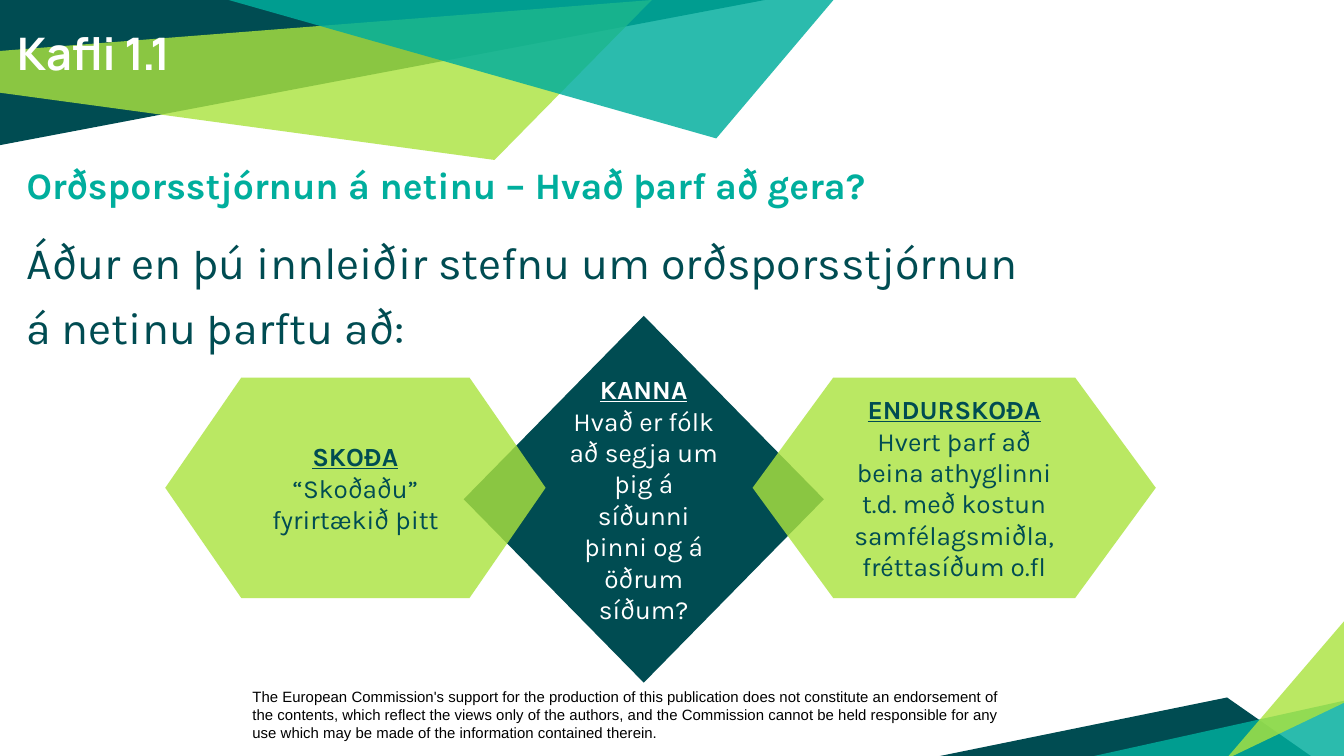
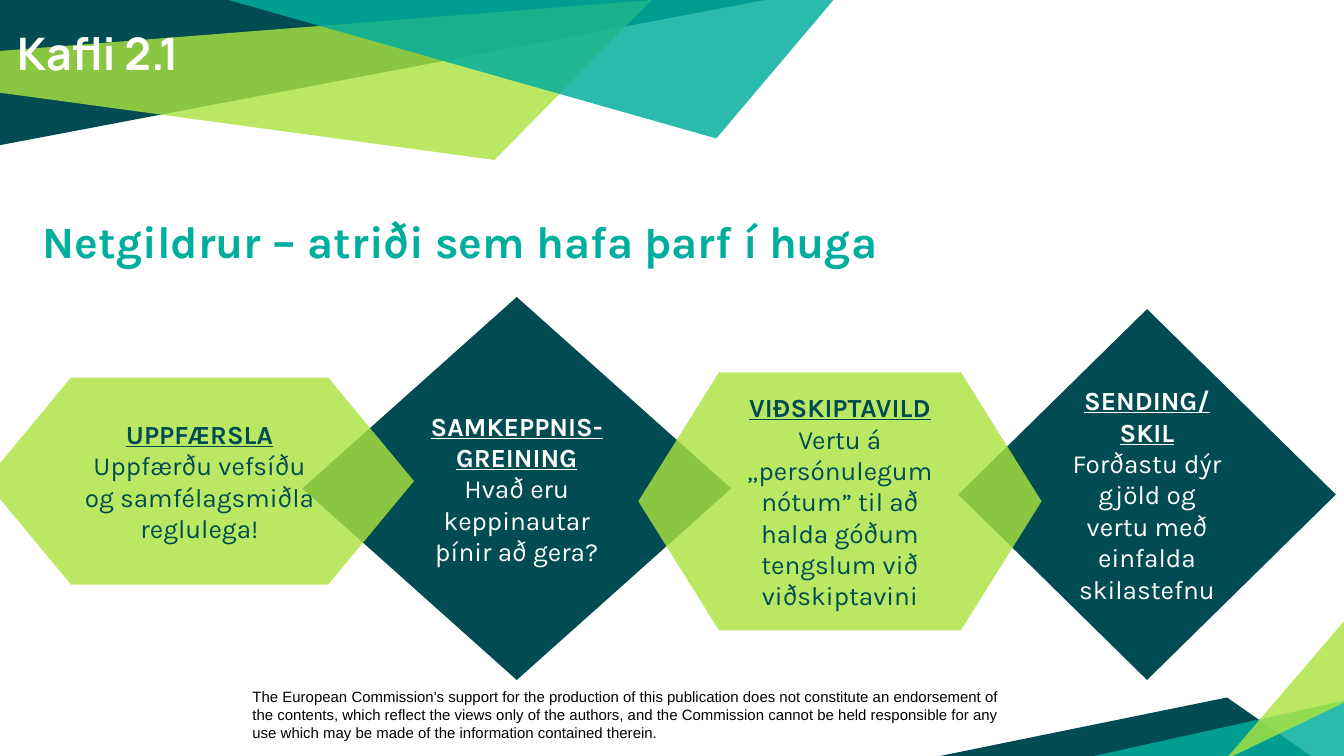
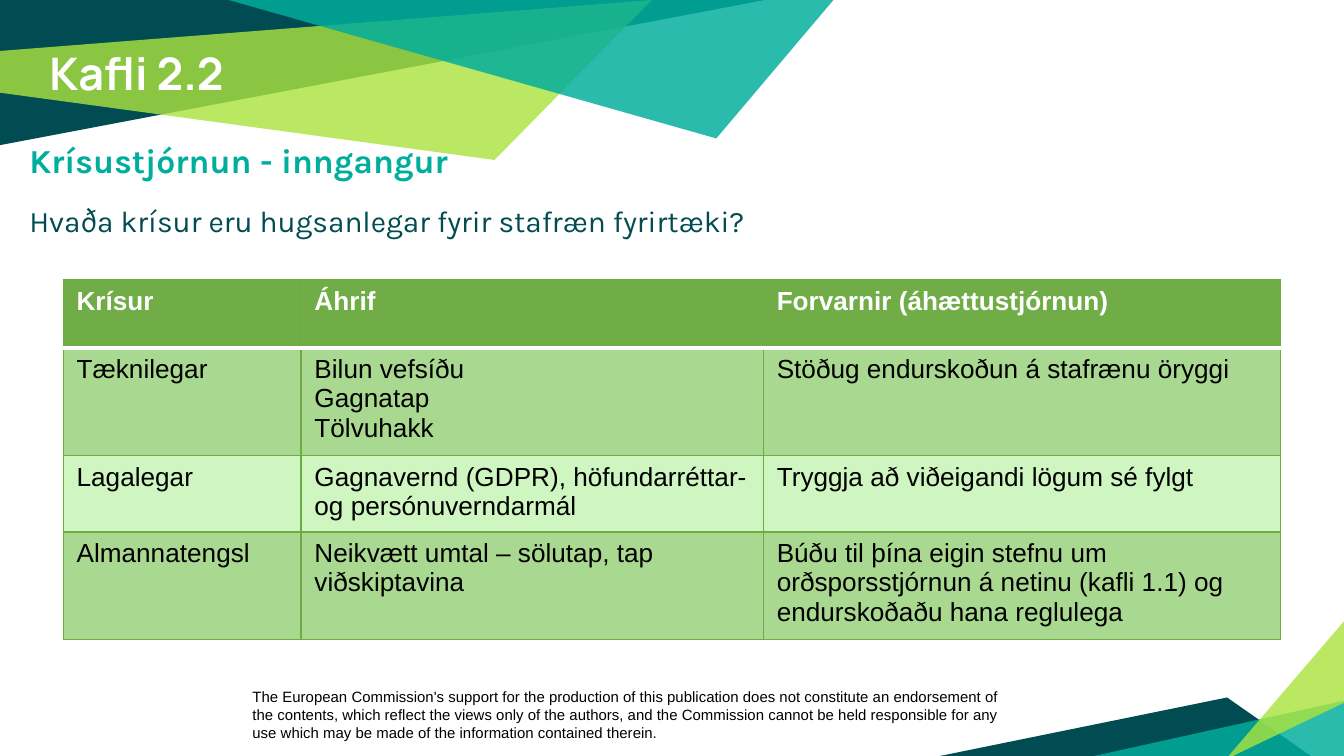
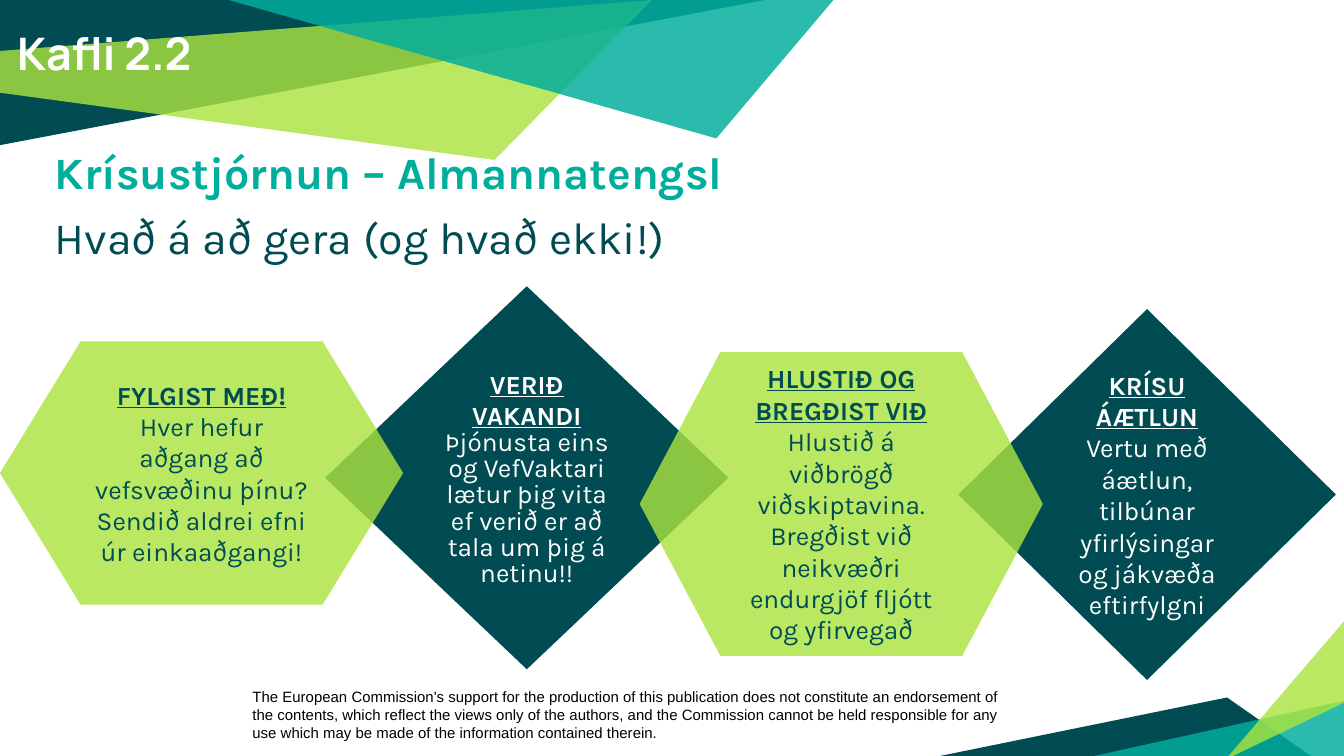
import pptx
import pptx.util
import pptx.dml.color
import pptx.enum.shapes
import pptx.enum.text
import pptx.oxml.ns
from dataclasses import dataclass
from lxml import etree

Inches, Pt = pptx.util.Inches, pptx.util.Pt
RGB = pptx.dml.color.RGBColor.from_string
qn = pptx.oxml.ns.qn
MSO = pptx.enum.shapes.MSO_SHAPE
ALIGN = pptx.enum.text.PP_ALIGN
ANCHOR = pptx.enum.text.MSO_ANCHOR


@dataclass(frozen=True)
class Theme:
    # Colours
    dark: str = "004C52"
    teal: str = "00AE9D"
    lime: str = "ABE33F"
    white: str = "FFFFFF"
    black: str = "000000"
    header: str = "70AD47"
    border: str = "6DAC43"
    band_dark: str = "A9D890"
    band_light: str = "CFF5C1"
    lime_alpha: int = 81
    teal_alpha: int = 83
    # Fonts and sizes
    heading_font: str = "Manrope"
    body_font: str = "Karla"
    plain_font: str = "Arial"
    large: int = 24
    medium: int = 20
    small_heading: int = 18
    question: int = 16
    label: int = 14
    footer: int = 8


T = Theme()

FOOTER = ("The European Commission's support for the production of this publication "
          "does not constitute an endorsement of the contents, which reflect the views "
          "only of the authors, and the Commission cannot be held responsible for any "
          "use which may be made of the information contained therein.")

# Decorative bands: colour, opacity in percent, corner points
BANDS = [
    (T.dark, 100, [(0, 0), (0, 1.08), (5.69, 0)]),
    (T.lime, T.lime_alpha, [(-0.01, 0.38), (0, 0.69), (3.68, 1.19), (4.85, 0)]),
    (T.dark, 100, [(6.97, 5.63), (9.76, 5.63), (9.13, 5.19)]),
    (T.teal, T.teal_alpha, [(10.02, 5.21), (10.02, 5.65), (8.03, 5.65)]),
    (T.lime, T.lime_alpha, [(10.02, 5.22), (10.02, 4.6), (9.12, 5.65)]),
    (T.teal, T.teal_alpha, [(1.7, 0), (5.33, 1.03), (6.21, -0.01), (6.09, 0)]),
]

CRISES = [
    ["Krísur", "Áhrif", "Forvarnir (áhættustjórnun)"],
    ["Tæknilegar", "Bilun vefsíðu\nGagnatap\nTölvuhakk",
     "Stöðug endurskoðun á stafrænu öryggi"],
    ["Lagalegar", "Gagnavernd (GDPR), höfundarréttar- og persónuverndarmál",
     "Tryggja að viðeigandi lögum sé fylgt"],
    ["Almannatengsl", "Neikvætt umtal – sölutap, tap viðskiptavina",
     "Búðu til þína eigin stefnu um orðsporsstjórnun á netinu (kafli 1.1) "
     "og endurskoðaðu hana reglulega"],
]


# Text
def write(tf, text, first=False, para=None, **font):
    """Write one paragraph; para and font hold the format values."""
    p = tf.paragraphs[0] if first else tf.add_paragraph()
    for name, value in (para or {}).items():
        setattr(p, name, value)
    r = p.add_run()
    r.text = text
    r.font.color.rgb = RGB(font.pop("color"))
    for name, value in font.items():
        setattr(r.font, name, value)


def prepare(tf, inset=0.1, anchor=ANCHOR.TOP):
    tf.word_wrap = True
    tf.vertical_anchor = anchor
    for side in ("left", "top", "right", "bottom"):
        setattr(tf, f"margin_{side}", Inches(inset))
    return tf


def add_text(s, box):
    return prepare(s.shapes.add_textbox(*map(Inches, box)).text_frame)


def add_heading(s, box, text, size=T.large):
    tf = add_text(s, box)
    write(tf, text, True, name=T.body_font, size=Pt(size), bold=True, color=T.teal)
    return tf


def add_lead(tf, text, size=T.large, space=6, first=False):
    para = {} if first else {"space_before": Pt(space)}
    write(tf, text, first, para, name=T.body_font, size=Pt(size), bold=False,
          color=T.dark)


# Shapes
def paint(sp, color, alpha=100):
    sp.shadow.inherit = False
    sp.fill.solid()
    sp.fill.fore_color.rgb = RGB(color)
    sp.line.fill.background()
    if alpha < 100:
        clr = sp._element.spPr.find(".//" + qn("a:srgbClr"))
        etree.SubElement(clr, qn("a:alpha")).set("val", str(alpha * 1000))


def add_band(s, color, alpha, points):
    start, *rest = [(Inches(x), Inches(y)) for x, y in points]
    builder = s.shapes.build_freeform(*start)
    builder.add_line_segments(rest, close=True)
    paint(builder.convert_to_shape(), color, alpha)


def add_step(s, kind, box, fill, alpha, ink, label, *texts, spacing=None):
    sp = s.shapes.add_shape(kind, *map(Inches, box))
    paint(sp, fill, alpha)
    tf = prepare(sp.text_frame, anchor=ANCHOR.MIDDLE)
    font = {"name": T.body_font, "size": Pt(T.label), "color": ink}
    centre = {"alignment": ALIGN.CENTER}
    write(tf, label, True, centre, bold=True, underline=True, **font)
    if spacing:
        centre["line_spacing"] = Pt(spacing)
    for text in texts:
        write(tf, text, para=centre, bold=False, underline=False, **font)


def add_diamond(s, box, label, *texts, spacing=None):
    add_step(s, MSO.DIAMOND, box, T.dark, 100, T.white, label, *texts, spacing=spacing)


def add_hexagon(s, box, label, *texts):
    add_step(s, MSO.FLOWCHART_PREPARATION, box, T.lime, T.lime_alpha, T.dark,
             label, *texts)


# Table
def set_border(cell, side, color, width):
    ln = etree.SubElement(cell._tc.get_or_add_tcPr(), qn(f"a:ln{side}"),
                          w=str(Pt(width)))
    fill = etree.SubElement(ln, qn("a:solidFill"))
    etree.SubElement(fill, qn("a:srgbClr"), val=color)


def add_table(s, box, widths, heights, rows):
    frame = s.shapes.add_table(len(rows), len(widths), *map(Inches, box))
    table = frame.table
    table.first_row = table.horz_banding = False
    for column, width in zip(table.columns, widths):
        column.width = Inches(width)
    for row, height in zip(table.rows, heights):
        row.height = Inches(height)
    frame.width, frame.height = map(Inches, box[2:])
    for i, row in enumerate(rows):
        is_header = i == 0
        fill = T.header if is_header else (T.band_light, T.band_dark)[i % 2]
        for j, text in enumerate(row):
            cell = table.cell(i, j)
            for side in "LRTB":
                below_header = (i, side) in ((0, "B"), (1, "T"))
                set_border(cell, side, *((T.white, 2) if below_header
                                         else (T.border, 0.75)))
            cell.fill.solid()
            cell.fill.fore_color.rgb = RGB(fill)
            for n, line in enumerate(text.split("\n")):
                write(cell.text_frame, line, n == 0, name=T.plain_font,
                      size=Pt(T.label), bold=is_header,
                      color=T.white if is_header else T.black)


# Frame shared by all slides
def add_slide(prs, chapter, left=0.03, top=0.09):
    s = prs.slides.add_slide(prs.slide_layouts[6])
    tf = add_text(s, (1.78, 5.07, 5.79, 0.5))
    tf.margin_top = tf.margin_bottom = Inches(0.05)
    write(tf, FOOTER, True, name=T.plain_font, size=Pt(T.footer), color=T.black)
    for band in BANDS:
        add_band(s, *band)
    write(add_text(s, (left, top, 8.06, 0.6)), chapter, True, name=T.heading_font,
          size=Pt(T.large), bold=True, color=T.white)
    return s


# Slides
def reputation_slide(prs):
    s = add_slide(prs, "Kafli 1.1")
    tf = add_heading(s, (0.1, 1.11, 10, 3.02),
                     "Orðsporsstjórnun á netinu – Hvað þarf að gera?", T.medium)
    add_lead(tf, "Áður en þú innleiðir stefnu um orðsporsstjórnun", space=14.4)
    add_lead(tf, "á netinu þarftu að:")
    add_diamond(s, (3.45, 2.35, 2.68, 2.73), "KANNA",
                "Hvað er fólk að segja um þig á síðunni þinni og á öðrum síðum?")
    add_hexagon(s, (1.23, 2.81, 2.83, 1.64), "SKOÐA", "“Skoðaðu” fyrirtækið þitt")
    add_hexagon(s, (5.6, 2.81, 3, 1.64), "ENDURSKOÐA",
                "Hvert þarf að beina athyglinni t.d. með kostun samfélagsmiðla, "
                "fréttasíðum o.fl")


def pitfalls_slide(prs):
    s = add_slide(prs, "Kafli 2.1")
    add_heading(s, (0.22, 1.49, 9.72, 0.81), "Netgildrur – atriði sem hafa þarf í huga")
    add_diamond(s, (7.13, 2.3, 2.81, 2.76), "SENDING/ SKIL",
                "Forðastu dýr gjöld og vertu með einfalda skilastefnu")
    add_diamond(s, (2.25, 2.21, 3.19, 2.85), "SAMKEPPNIS-GREINING",
                "Hvað eru keppinautar þínir að gera?")
    add_hexagon(s, (-0.11, 2.81, 3.19, 1.54), "UPPFÆRSLA",
                "Uppfærðu vefsíðu og samfélagsmiðla reglulega!")
    add_hexagon(s, (4.75, 2.77, 3, 1.92), "VIÐSKIPTAVILD", "Vertu á",
                "„persónulegum nótum” til að halda góðum tengslum við viðskiptavini")


def crisis_table_slide(prs):
    s = add_slide(prs, "Kafli 2.2", 0.27, 0.24)
    add_heading(s, (0.12, 0.94, 9.7, 3.74), "Krísustjórnun - inngangur",
                T.small_heading)
    add_lead(add_text(s, (0.12, 1.41, 9.6, 0.85)),
             "Hvaða krísur eru hugsanlegar fyrir stafræn fyrirtæki?",
             T.question, first=True)
    add_table(s, (0.47, 2.08, 9.06, 2.68), (1.77, 3.44, 3.85),
              (0.51, 0.72, 0.51, 0.51), CRISES)


def public_relations_slide(prs):
    s = add_slide(prs, "Kafli 2.2")
    tf = add_heading(s, (0.31, 0.98, 9.69, 1.23), "Krísustjórnun – Almannatengsl")
    add_lead(tf, "Hvað á að gera (og hvað ekki!)")
    add_diamond(s, (7.13, 2.3, 2.81, 2.76), "KRÍSU ÁÆTLUN",
                "Vertu með áætlun, tilbúnar yfirlýsingar og jákvæða eftirfylgni")
    add_diamond(s, (2.42, 2.13, 3, 2.85), "VERIÐ VAKANDI",
                "Þjónusta eins og VefVaktari lætur þig vita ef verið er að tala "
                "um þig á netinu!!", spacing=14)
    add_hexagon(s, (0, 2.54, 3, 1.96), "FYLGIST MEÐ!",
                "Hver hefur aðgang að vefsvæðinu þínu? Sendið aldrei efni úr "
                "einkaaðgangi!")
    add_hexagon(s, (4.76, 2.62, 3, 2.26), "HLUSTIÐ OG BREGÐIST VIÐ",
                "Hlustið á viðbrögð viðskiptavina. Bregðist við neikvæðri endurgjöf "
                "fljótt og yfirvegað")


def main():
    prs = pptx.Presentation()
    prs.slide_width = Inches(10)
    prs.slide_height = prs.slide_width * 9 // 16
    for build in (reputation_slide, pitfalls_slide, crisis_table_slide,
                  public_relations_slide):
        build(prs)
    prs.save("out.pptx")


if __name__ == "__main__":
    main()
